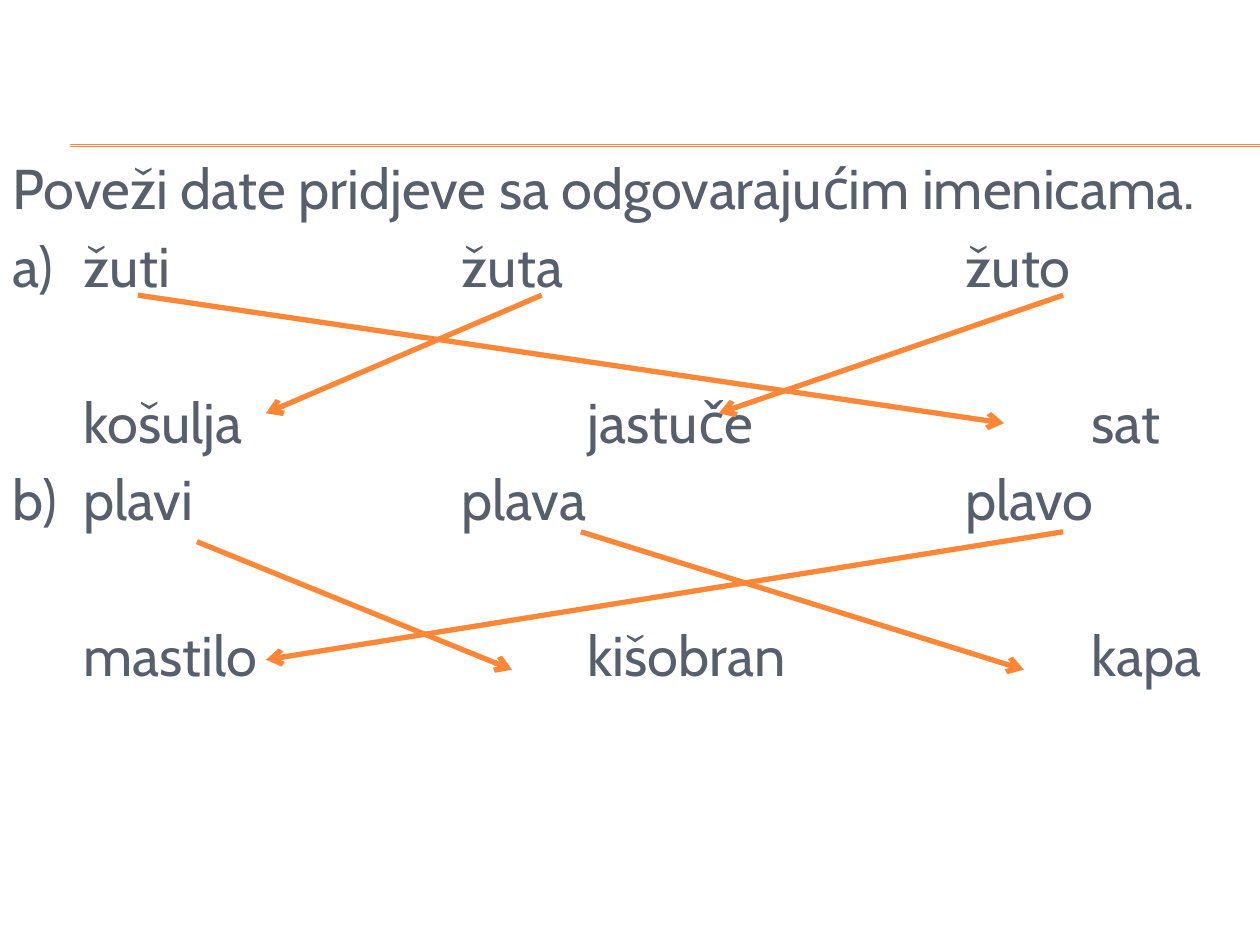
"""Build a Croatian exercise slide matching adjectives to nouns with arrows."""
from lxml.etree import SubElement
from pptx import Presentation
from pptx.dml.color import RGBColor
from pptx.enum.shapes import MSO_CONNECTOR
from pptx.enum.text import MSO_ANCHOR, MSO_AUTO_SIZE, PP_ALIGN
from pptx.oxml.ns import qn
from pptx.util import Cm, Pt


def color(value):
    return RGBColor.from_string(value)


class ExerciseSlide:
    font = "Cabin"
    size = 32
    ink = "575F6D"
    accent = "FE8637"
    gap = 5.9
    line_pitch = 44.8

    def __init__(self, deck):
        self.page = deck.slides.add_slide(deck.slide_layouts[1])
        title = self.page.shapes.title
        title.element.getparent().remove(title.element)

    def line(self, start, end, width, arrow=False):
        connector = self.page.shapes.add_connector(
            MSO_CONNECTOR.STRAIGHT, *(Cm(value) for value in start + end))
        connector.line.color.rgb = color(self.accent)
        connector.line.width = Pt(width)
        if arrow:
            SubElement(connector.line._get_or_add_ln(), qn("a:tailEnd"), type="arrow")
        SubElement(connector.element.spPr, qn("a:effectLst"))

    def body(self, left, top, width, height, rows):
        box = self.page.placeholders[1]
        box.left, box.top, box.width, box.height = map(Cm, (left, top, width, height))
        frame = box.text_frame
        frame.text = "\n".join(text for text, indent, skipped in rows)
        frame.word_wrap = True
        frame.auto_size = MSO_AUTO_SIZE.NONE
        frame.vertical_anchor = MSO_ANCHOR.TOP
        for para, (text, indent, skipped) in zip(frame.paragraphs, rows):
            self.format_paragraph(para, indent, skipped)
        frame.paragraphs[0].space_before = Pt(0)

    def format_paragraph(self, para, indent, skipped):
        para.alignment = PP_ALIGN.LEFT
        para.space_before = Pt(self.gap + skipped * self.line_pitch)
        properties = para._p.get_or_add_pPr()
        properties.set("marL", str(Cm(indent)))
        properties.set("indent", str(-Cm(indent)))
        properties.set("defTabSz", str(Cm(2.54)))
        SubElement(properties, qn("a:buNone"))
        for span in para.runs:
            span.font.name = self.font
            span.font.size = Pt(self.size)
            span.font.color.rgb = color(self.ink)


def main():
    deck = Presentation()
    deck.slide_width, deck.slide_height = Cm(25.4), Cm(19.05)
    slide = ExerciseSlide(deck)
    for height in (2.92, 2.95):
        slide.line((1.42, height), (25.4, height), 0.75)
    slide.body(0, 2.97, 24.97, 13.92, [
        ("Poveži date pridjeve sa odgovarajućim imenicama.", 0.95, 0),
        ("a)\tžuti\t\t\tžuta\t\t\t\tžuto", 1.43, 0),
        ("\tkošulja\t\t\tjastuče\t\t\tsat", 1.43, 1),
        ("b)\tplavi\t\t\tplava\t\t\t\tplavo", 1.43, 0),
        ("\tmastilo\t\t\tkišobran\t\t\tkapa", 1.43, 1),
    ])
    matches = [
        ((2.78, 5.95), (20.24, 8.53)),
        ((10.92, 5.95), (5.36, 8.33)),
        ((21.43, 5.95), (14.49, 8.33)),
        ((3.97, 10.92), (10.32, 13.5)),
        ((11.71, 10.72), (20.64, 13.5)),
        ((21.43, 10.72), (5.36, 13.3)),
    ]
    for adjective, noun in matches:
        slide.line(adjective, noun, 3, arrow=True)
    deck.save("out.pptx")


if __name__ == "__main__":
    main()
